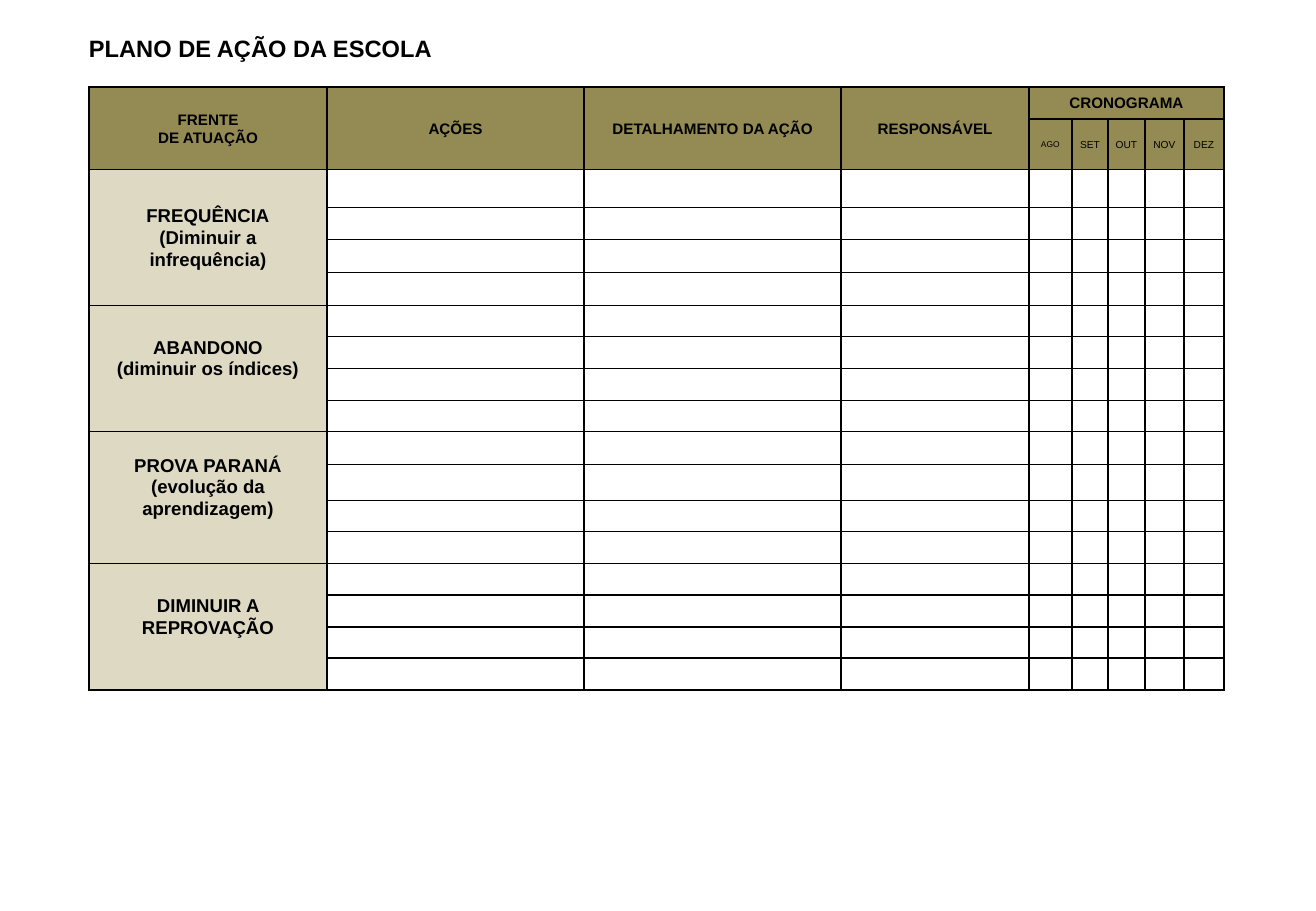
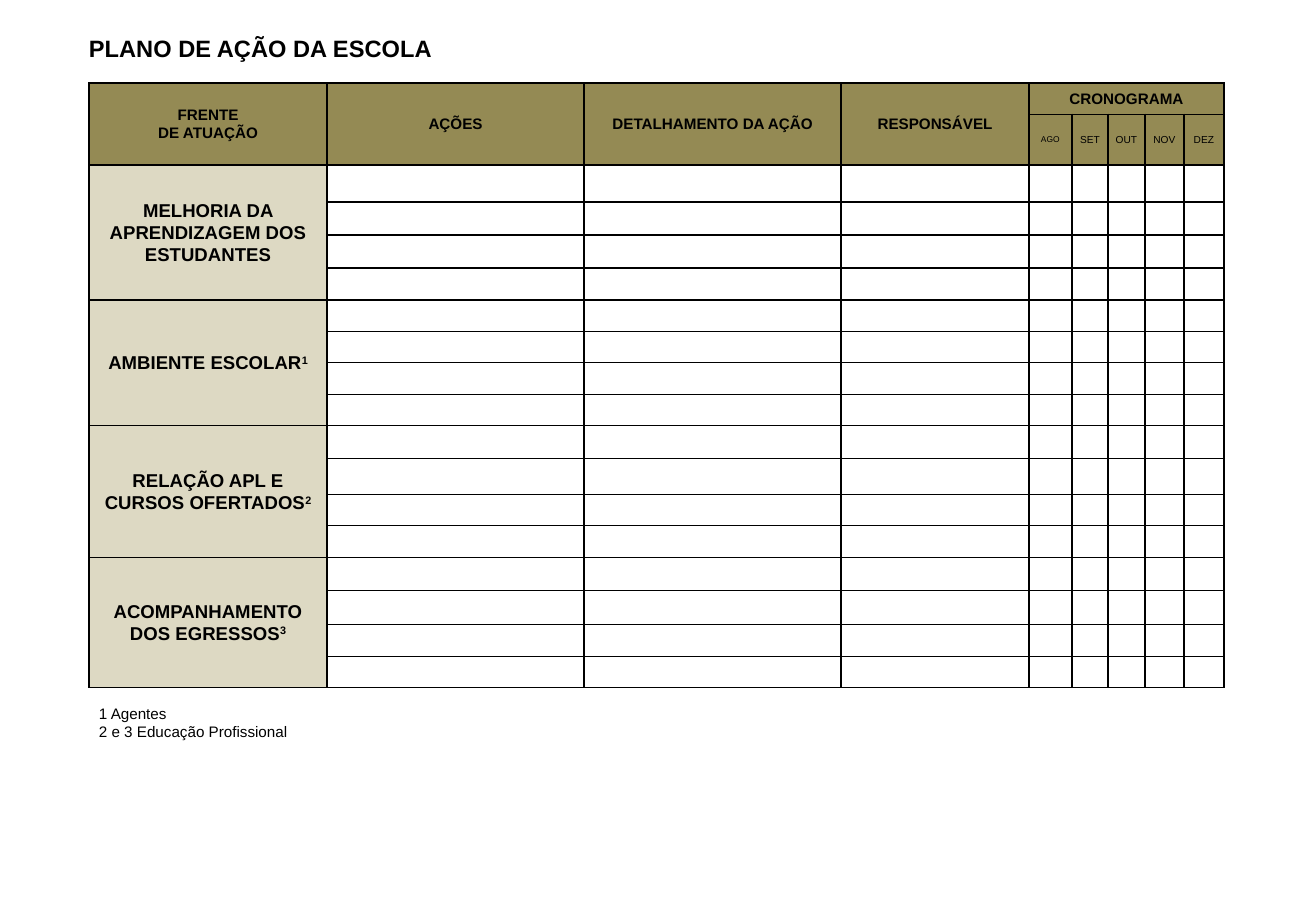
from lxml import etree
from pptx import Presentation
from pptx.dml.color import RGBColor
from pptx.enum.text import MSO_ANCHOR as ANCHOR, PP_ALIGN as ALIGN
from pptx.oxml import parse_xml
from pptx.util import Pt

EMU_PER_PX = 914400 / 121.5
FONT = "Arial"
BLACK = RGBColor(0x00, 0x00, 0x00)
OLIVE = RGBColor(0x94, 0x8A, 0x54)
SAND = RGBColor(0xDD, 0xD9, 0xC3)
DRAWING_NS = "http://schemas.openxmlformats.org/drawingml/2006/main"

WIDE_INSET = (11, 6, 11, 6)
THIN_INSET = (1, 1, 1, 0)
RAISED_INSET = (11, 6, 11, 27)

TITLE = "PLANO DE AÇÃO DA ESCOLA"
HEADINGS = [["FRENTE", "DE ATUAÇÃO"], ["AÇÕES"], ["DETALHAMENTO DA AÇÃO"], ["RESPONSÁVEL"]]
SCHEDULE = "CRONOGRAMA"
MONTHS = ["AGO", "SET", "OUT", "NOV", "DEZ"]
COLUMNS = [238, 257, 257, 188, 43, 36, 37, 39, 40]
HEADER_ROWS = 2
ROWS_PER_FRONT = 4


def px(length):
    return round(length * EMU_PER_PX)


class PlanDeck:
    """Holds the shared style and the slide being built."""

    def __init__(self):
        self.deck = Presentation()
        self.deck.slide_width, self.deck.slide_height = px(1316), px(911)
        self.slide = None

    def new_slide(self):
        self.slide = self.deck.slides.add_slide(self.deck.slide_layouts[6])
        self.text(77, 28, 484, 41, [TITLE], 14, bold=True)

    def add_lines(self, frame, lines, size, bold=False, align=ALIGN.LEFT, spacing=None):
        """Each line is a text, or a text with its superscript note."""
        for index, line in enumerate(lines):
            paragraph = frame.add_paragraph() if index else frame.paragraphs[0]
            paragraph.alignment = align
            if spacing:
                paragraph.line_spacing = spacing
            words, note = (line, "") if isinstance(line, str) else line
            self.add_words(paragraph, words, size, bold)
            if note:
                raised = self.add_words(paragraph, note, size, bold)
                raised.font._element.set("baseline", "30000")

    def add_words(self, paragraph, words, size, bold):
        run = paragraph.add_run()
        run.text = words
        run.font.name, run.font.size, run.font.bold = FONT, Pt(size), bold
        run.font.color.rgb = BLACK
        return run

    def text(self, left, top, width, height, lines, size, bold=False):
        box = self.slide.shapes.add_textbox(px(left), px(top), px(width), px(height))
        box.text_frame.word_wrap = True
        self.add_lines(box.text_frame, lines, size, bold)

    def blank_cell(self, cell):
        """Black borders, no fill, and a small font so the row keeps its height."""
        properties = cell._tc.get_or_add_tcPr()
        for side in "LRTB":
            properties.append(parse_xml(
                f'<a:ln{side} xmlns:a="{DRAWING_NS}" w="12700"><a:solidFill>'
                f'<a:srgbClr val="{BLACK}"/></a:solidFill></a:ln{side}>'))
        cell.fill.background()
        self.inset(cell, THIN_INSET)
        end = etree.SubElement(cell.text_frame.paragraphs[0]._p, f"{{{DRAWING_NS}}}endParaRPr")
        end.set("sz", "600")

    def inset(self, cell, margins):
        cell.margin_left, cell.margin_top, cell.margin_right, cell.margin_bottom = map(px, margins)

    def fill_cell(self, cell, lines, color, size, bold=True, margins=WIDE_INSET):
        cell.fill.solid()
        cell.fill.fore_color.rgb = color
        cell.vertical_anchor = ANCHOR.MIDDLE
        self.inset(cell, margins)
        self.add_lines(cell.text_frame, lines, size, bold, ALIGN.CENTER, 1.06)

    def plan(self, top, rows, fronts):
        """Action plan grid: fronts is a list of (lines, margins)."""
        frame = self.slide.shapes.add_table(
            len(rows), len(COLUMNS), px(89), px(top), px(sum(COLUMNS)), px(sum(rows)))
        grid = frame.table
        grid.first_row = grid.horz_banding = False
        for column, width in zip(grid.columns, COLUMNS):
            column.width = px(width)
        for row, height in zip(grid.rows, rows):
            row.height = px(height)
        for cell in grid.iter_cells():
            self.blank_cell(cell)

        # Header
        for column, lines in enumerate(HEADINGS):
            grid.cell(0, column).merge(grid.cell(1, column))
            self.fill_cell(grid.cell(0, column), lines, OLIVE, 9)
        first_month = len(HEADINGS)
        grid.cell(0, first_month).merge(grid.cell(0, len(COLUMNS) - 1))
        self.fill_cell(grid.cell(0, first_month), [SCHEDULE], OLIVE, 9)
        for column, month in enumerate(MONTHS, first_month):
            is_first = column == first_month
            self.fill_cell(grid.cell(1, column), [month], OLIVE, 5 if is_first else 6,
                           False, WIDE_INSET if is_first else THIN_INSET)

        # Fronts of action
        for index, (lines, margins) in enumerate(fronts):
            start = HEADER_ROWS + index * ROWS_PER_FRONT
            grid.cell(start, 0).merge(grid.cell(start + ROWS_PER_FRONT - 1, 0))
            self.fill_cell(grid.cell(start, 0), lines, SAND, 11, margins=margins)


def main():
    plan = PlanDeck()

    # Attendance, dropout, exam and failure
    plan.new_slide()
    plan.plan(
        87,
        [32, 47, 38, 32, 33, 33, 31, 32, 32, 31, 33, 36, 31, 32, 32, 32, 31, 32],
        [(["FREQUÊNCIA", "(Diminuir a infrequência)"], WIDE_INSET),
         (["ABANDONO", "(diminuir os índices)"], RAISED_INSET),
         (["PROVA PARANÁ (evolução da aprendizagem)"], RAISED_INSET),
         (["DIMINUIR A REPROVAÇÃO"], RAISED_INSET)])

    # Learning, environment, courses and graduates
    plan.new_slide()
    plan.plan(
        83,
        [31, 50, 37, 33, 33, 32, 32, 31, 32, 31, 33, 36, 31, 32, 33, 34, 32, 31],
        [(["MELHORIA DA APRENDIZAGEM DOS ESTUDANTES"], WIDE_INSET),
         ([("AMBIENTE ESCOLAR", "1")], WIDE_INSET),
         ([("RELAÇÃO APL E CURSOS OFERTADOS", "2")], WIDE_INSET),
         (["ACOMPANHAMENTO", ("DOS EGRESSOS", "3")], WIDE_INSET)])
    plan.text(87, 698, 722, 49, ["1 Agentes", "2 e 3 Educação Profissional"], 9)

    plan.deck.save("out.pptx")


if __name__ == "__main__":
    main()
